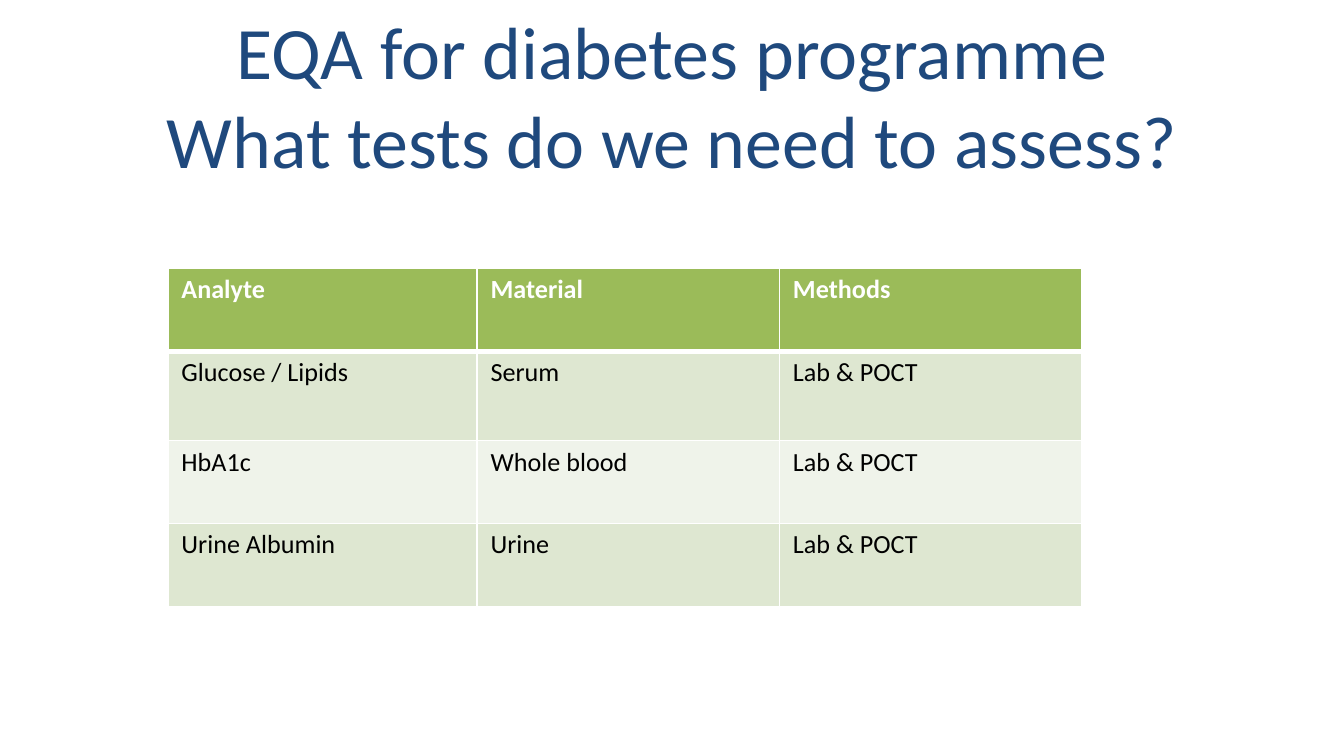
from lxml.etree import SubElement
from pptx import Presentation
from pptx.dml.color import RGBColor
from pptx.enum.text import MSO_ANCHOR, PP_ALIGN
from pptx.oxml.ns import qn
from pptx.util import Pt

FONT = "Calibri"
COLORS = {
    "title": "1F497D",
    "header": "9BBB59",
    "odd_row": "DEE7D1",
    "even_row": "EFF3EA",
    "white": "FFFFFF",
    "black": "000000",
}
TITLE = "EQA for diabetes programme\vWhat tests do we need to assess?"
TESTS = [
    ("Analyte", "Material", "Methods"),
    ("Glucose / Lipids", "Serum", "Lab & POCT"),
    ("HbA1c", "Whole blood", "Lab & POCT"),
    ("Urine Albumin", "Urine", "Lab & POCT"),
]
COLUMN_WIDTHS = [165.6, 162, 162]
ROW_HEIGHTS = [44.6, 48, 44.4, 44.4]


def color(name):
    return RGBColor.from_string(COLORS[name])


def style_font(paragraph, size, color_name, bold=False):
    font = paragraph.font
    font.name, font.size, font.bold = FONT, Pt(size), bold
    font.color.rgb = color(color_name)


def add_title(slide):
    box = slide.shapes.add_textbox(Pt(36), Pt(16.5), Pt(648), Pt(68))
    frame = box.text_frame
    frame.word_wrap = True
    frame.vertical_anchor = MSO_ANCHOR.MIDDLE
    paragraph = frame.paragraphs[0]
    paragraph.text = TITLE
    paragraph.alignment = PP_ALIGN.CENTER
    style_font(paragraph, 39.6, "title")


def add_borders(cell, top, bottom):
    properties = cell._tc.get_or_add_tcPr()
    for side, width in (("L", 1), ("R", 1), ("T", top), ("B", bottom)):
        line = SubElement(properties, qn(f"a:ln{side}"), w=str(Pt(width)))
        fill = SubElement(line, qn("a:solidFill"))
        SubElement(fill, qn("a:srgbClr"), val=COLORS["white"])


def fill_cell(cell, text, row):
    is_header = row == 0
    add_borders(cell, top=3 if row == 1 else 1, bottom=3 if is_header else 1)
    fill_name = "header" if is_header else "odd_row" if row % 2 else "even_row"
    cell.fill.solid()
    cell.fill.fore_color.rgb = color(fill_name)
    cell.margin_left = cell.margin_right = Pt(7.2)
    cell.margin_top = cell.margin_bottom = Pt(3)
    paragraph = cell.text_frame.paragraphs[0]
    paragraph.text = text
    style_font(paragraph, 14, "white" if is_header else "black", is_header)


def add_test_table(slide):
    frame = slide.shapes.add_table(
        len(TESTS), len(COLUMN_WIDTHS), Pt(90), Pt(143.5),
        Pt(sum(COLUMN_WIDTHS)), Pt(sum(ROW_HEIGHTS)))
    table = frame.table
    for column, width in zip(table.columns, COLUMN_WIDTHS):
        column.width = Pt(width)
    for row, height in zip(table.rows, ROW_HEIGHTS):
        row.height = Pt(height)
    for row, texts in enumerate(TESTS):
        for column, text in enumerate(texts):
            fill_cell(table.cell(row, column), text, row)


def main():
    presentation = Presentation()
    presentation.slide_width, presentation.slide_height = Pt(720), Pt(405)
    slide = presentation.slides.add_slide(presentation.slide_layouts[6])
    add_title(slide)
    add_test_table(slide)
    presentation.save("out.pptx")


if __name__ == "__main__":
    main()
